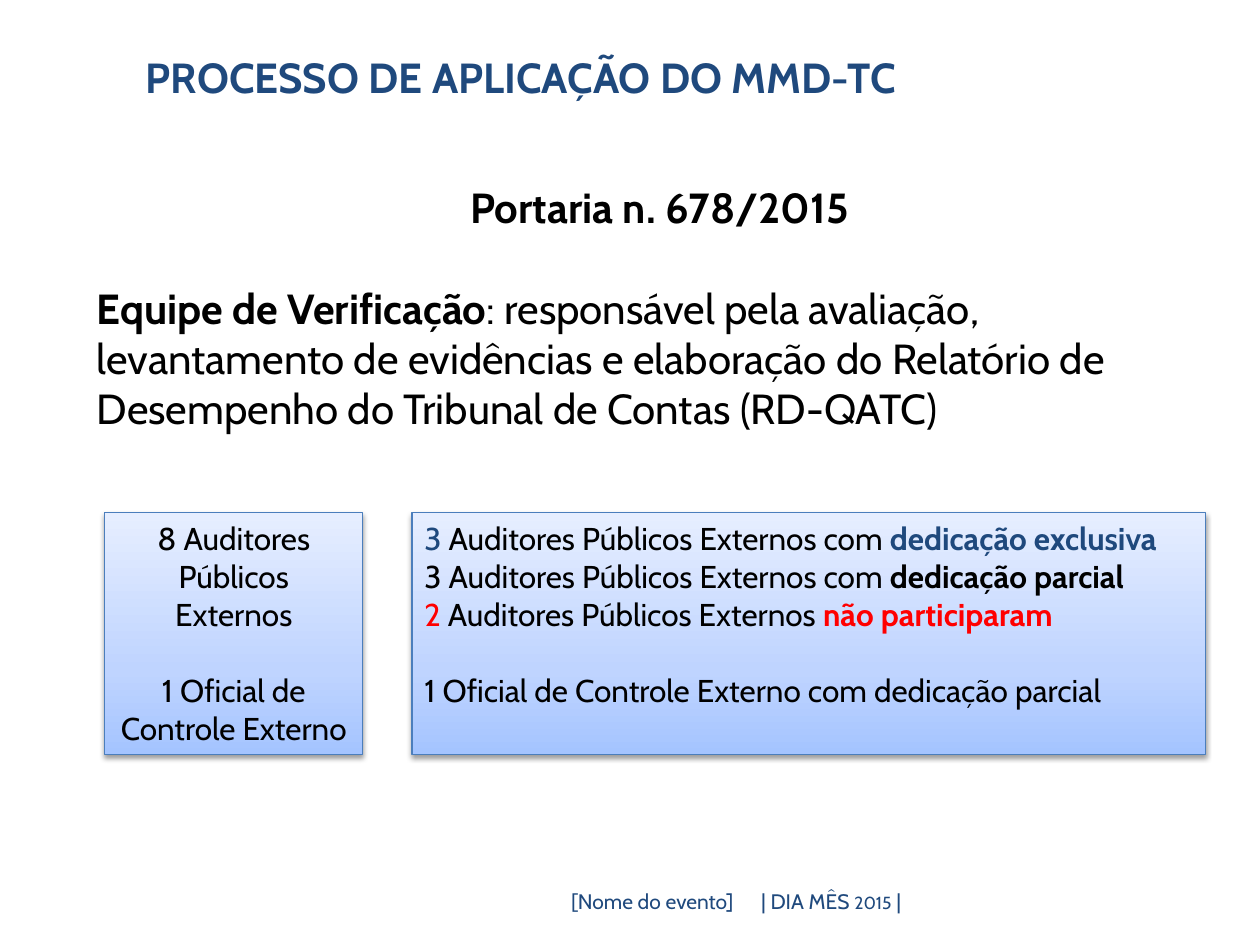
from copy import deepcopy
from lxml import etree
from pptx import Presentation, util as u
from pptx.dml.color import RGBColor
from pptx.enum import shapes, text
from pptx.oxml.ns import qn

BLUE, BLACK, RED, EDGE = "1F497D", "000000", "FF0000", "4B7EBC"
STOPS = [(0, "A4C4FF"), (0.35, "BFD4FF"), (1, "E6EEFF")]
LEFT, MID, RIGHT = text.PP_ALIGN.LEFT, text.PP_ALIGN.CENTER, text.PP_ALIGN.RIGHT

# A paragraph is a list of runs; a run is its words and what differs from the box's format.
BOLD = {"bold": True}
TITLE = [[("PROCESSO DE APLICAÇÃO DO MMD-TC", BOLD)]]
HEAD = [[("Portaria n. 678/2015", BOLD)]]
BODY = [[("Equipe de Verificação", BOLD),
         (": responsável pela avaliação, levantamento de evidências e elaboração do "
          "Relatório de Desempenho do Tribunal de Contas (RD-QATC)", {})]]
TEAM = [[("8 Auditores Públicos Externos", {})],
        [("1 Oficial de Controle Externo", {})]]
ROLES = [[("3", {"color": BLUE}), (" Auditores Públicos Externos com ", {}),
          ("dedicação exclusiva", {"color": BLUE, "bold": True})],
         [("3 Auditores Públicos Externos com ", {}), ("dedicação parcial", BOLD)],
         [("2 ", {"color": RED}), ("Auditores Públicos Externos ", {}),
          ("não participaram", {"color": RED, "bold": True})],
         [("1 Oficial de Controle Externo com dedicação parcial", {})]]
EVENT = [[("[Nome do evento]", {})]]
DATE = [[("| DIA MÊS ", {}), ("2015", {"size": 10}), (" |", {})]]

CARD_TOP, CARD_H = 4.07, 1.92
FOOT_TOP, FOOT_H = 7, 0.3


def rgb(code):
    return RGBColor.from_string(code)


def write(shape, paras, size=24, color=BLACK, align=LEFT, gap=0,
          anchor=text.MSO_ANCHOR.TOP):
    """Fill a shape with paragraphs; gap is the space before the last one."""
    frame = shape.text_frame
    frame.word_wrap = True
    frame.vertical_anchor = anchor
    for i, runs in enumerate(paras):
        para = frame.add_paragraph() if i else frame.paragraphs[0]
        para.alignment = align
        if i and i == len(paras) - 1:
            para.space_before = u.Pt(gap)
        for words, look in runs:
            run = para.add_run()
            run.text = words
            run.font.name = "Cabin"
            run.font.size = u.Pt(look.get("size", size))
            run.font.bold = look.get("bold", False)
            run.font.color.rgb = rgb(look.get("color", color))


def label(slide, box, paras, **look):
    write(slide.shapes.add_textbox(*map(u.Inches, box)), paras, **look)


def card(slide, left, width, paras, **look):
    """Add a rectangle with a gradient, a thin edge and a soft shadow."""
    box = map(u.Inches, (left, CARD_TOP, width, CARD_H))
    shape = slide.shapes.add_shape(shapes.MSO_SHAPE.RECTANGLE, *box)
    fill = shape.fill
    fill.gradient()
    fill.gradient_angle = 90
    props = shape.element.spPr
    first = props.find(".//" + qn("a:gs"))
    first.addnext(deepcopy(first))
    for stop, (place, code) in zip(fill.gradient_stops, STOPS):
        stop.position = place
        stop.color.rgb = rgb(code)
    shape.line.color.rgb = rgb(EDGE)
    shape.line.width = u.Pt(0.75)

    shape.shadow.inherit = False
    shade = etree.SubElement(props.find(qn("a:effectLst")), qn("a:outerShdw"),
                             blurRad=str(u.Pt(3.1)), dist=str(u.Pt(1.6)),
                             dir="5400000", rotWithShape="0")
    tint = etree.SubElement(shade, qn("a:srgbClr"), val=BLACK)
    etree.SubElement(tint, qn("a:alpha"), val="38000")
    write(shape, paras, size=18, **look)


def main():
    deck = Presentation()
    deck.slide_width, deck.slide_height = u.Inches(10), u.Inches(7.5)
    slide = deck.slides.add_slide(deck.slide_layouts[6])

    foot = dict(size=12, color=BLUE, align=RIGHT, anchor=text.MSO_ANCHOR.MIDDLE)
    label(slide, (5.67, FOOT_TOP, 1.58, FOOT_H), DATE, **foot)
    label(slide, (0.75, FOOT_TOP, 5.17, FOOT_H), EVENT, **foot)
    label(slide, (0.63, 0.36, 7.01, 0.5), TITLE, color=BLUE, align=MID)
    label(slide, (0.67, 1.39, 9.13, 0.5), HEAD, align=MID)
    label(slide, (0.67, 2.19, 9.13, 1.3), BODY)
    card(slide, 0.83, 2.05, TEAM, align=MID, gap=22)
    card(slide, 3.27, 6.3, ROLES, gap=22)
    deck.save("out.pptx")


if __name__ == "__main__":
    main()
